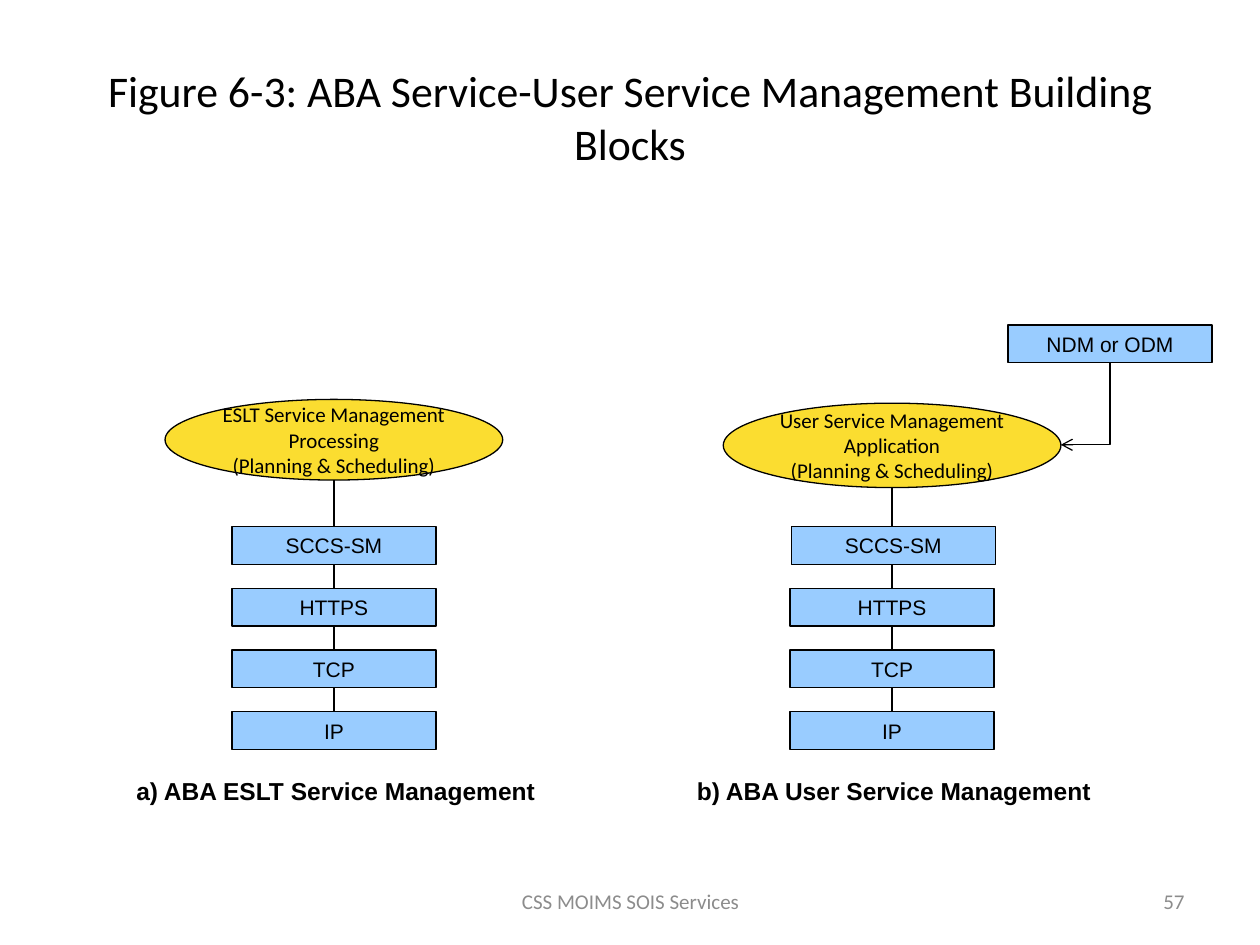
from lxml import etree
from pptx import Presentation
from pptx.dml.color import RGBColor
from pptx.enum.shapes import MSO_CONNECTOR, MSO_SHAPE
from pptx.enum.text import MSO_ANCHOR, MSO_AUTO_SIZE, PP_ALIGN
from pptx.oxml.ns import qn
from pptx.util import Pt

RECTANGLE, ELLIPSE = MSO_SHAPE.RECTANGLE, MSO_SHAPE.OVAL
STRAIGHT, ELBOW = MSO_CONNECTOR.STRAIGHT, MSO_CONNECTOR.ELBOW
CENTER, RIGHT = PP_ALIGN.CENTER, PP_ALIGN.RIGHT
MIDDLE = MSO_ANCHOR.MIDDLE
NO_FIT = MSO_AUTO_SIZE.NONE

PX = 9144  # 100 px to the inch
BLACK, GRAY, BLUE, YELLOW = "000000", "8C8C8C", "99CCFF", "FBDD30"
BOX_WIDTH, BOX_HEIGHT, BOX_PITCH = 162, 30, 49


def color(hex_value):
    return RGBColor.from_string(hex_value)


def write(shape, lines, size, font="Calibri", text_color=BLACK, bold=False,
          align=CENTER, margins=(10, 5), wrap=True, spacing=None):
    frame = shape.text_frame
    side, end = (margin * PX for margin in margins)
    frame_format = {"word_wrap": wrap, "auto_size": NO_FIT, "vertical_anchor": MIDDLE,
                    "margin_left": side, "margin_right": side,
                    "margin_top": end, "margin_bottom": end}
    for name, value in frame_format.items():
        setattr(frame, name, value)
    frame.text = "\n".join(lines)
    for paragraph in frame.paragraphs:
        paragraph.alignment = align
        paragraph.line_spacing = spacing
        for name, value in {"name": font, "size": Pt(size), "bold": bold}.items():
            setattr(paragraph.runs[0].font, name, value)
        paragraph.runs[0].font.color.rgb = color(text_color)


def add_block(kind, box, fill, lines, **text_format):
    shape = slide.shapes.add_shape(kind, *(value * PX for value in box))
    shape.shadow.inherit = False
    shape.fill.solid()
    shape.fill.fore_color.rgb = color(fill)
    shape.line.color.rgb = color(BLACK)
    shape.line.width = Pt(0.75)
    write(shape, lines, 12, **text_format)
    return shape


presentation = Presentation()
presentation.slide_width, presentation.slide_height = 1000 * PX, 750 * PX
slide = presentation.slides.add_slide(presentation.slide_layouts[5])
box_text = {"font": "Arial", "margins": (4, 3)}

# Title
title = slide.shapes.title
for name, value in {"left": 50, "top": 30, "width": 900, "height": 125}.items():
    setattr(title, name, value * PX)
write(title, ["Figure 6-3: ABA Service-User Service Management Building Blocks"], 25)

# Protocol stacks: ellipse, line down to IP, then the layers over the line
stacks = [
    ((131, 317, 268, 64), "ESLT Service Management Processing", 184, 184),
    ((574, 320, 268, 67), "User Service Management Application", 627, 628),
]
for ellipse_box, application, box_left, top_box_left in stacks:
    add_block(ELLIPSE, ellipse_box, YELLOW,
              [application, "(Planning & Scheduling)"], margins=(0, 0))
    left, top, width, height = ellipse_box
    for row, protocol in enumerate(["IP", "TCP", "HTTPS", "SCCS-SM"]):
        layer_left = top_box_left if protocol == "SCCS-SM" else box_left
        layer = add_block(RECTANGLE,
                          (layer_left, 565 - row * BOX_PITCH, BOX_WIDTH, BOX_HEIGHT),
                          BLUE, [protocol], **box_text)
        if protocol == "IP":
            middle = (left + width // 2) * PX
            link = slide.shapes.add_connector(STRAIGHT, middle, (top + height) * PX,
                                              middle, 565 * PX)
            link.end_connect(layer, 0)
            link.line.color.rgb = color(BLACK)
            link.line.width = Pt(1.5)
            etree.SubElement(link._element.spPr, qn("a:effectLst"))

# Captions, footer and page number
caption_format = {"size": 14, "font": "Arial", "bold": True, "wrap": False, "spacing": 0.8}
footer_format = {"size": 12, "text_color": GRAY}
labels = [
    ((97, 615, 339, 30), "a) ABA ESLT Service Management", caption_format),
    ((542, 615, 335, 30), "b) ABA User Service Management", caption_format),
    ((342, 695, 317, 40), "CSS MOIMS SOIS Services", footer_format),
    ((717, 695, 233, 40), "57", {**footer_format, "align": RIGHT}),
]
for box, text, text_format in labels:
    label = slide.shapes.add_textbox(*(value * PX for value in box))
    write(label, [text], **text_format)

# Data message source, with a bent arrow into the user application
add_block(RECTANGLE, (800, 258, BOX_WIDTH, BOX_HEIGHT), BLUE, ["NDM or ODM"], **box_text)
arrow = slide.shapes.add_connector(ELBOW, 829 * PX, 301 * PX, 894 * PX, 340 * PX)
arrow.line.color.rgb = color(BLACK)
arrow.line.width = Pt(0.75)
properties = arrow._element.spPr
properties.find(qn("a:xfrm")).set("rot", "5400000")  # a quarter turn: down, then left
properties.find(qn("a:prstGeom")).set("prst", "bentConnector2")
etree.SubElement(properties.find(qn("a:ln")), qn("a:tailEnd"), type="arrow")
etree.SubElement(properties, qn("a:effectLst"))

presentation.save("out.pptx")
